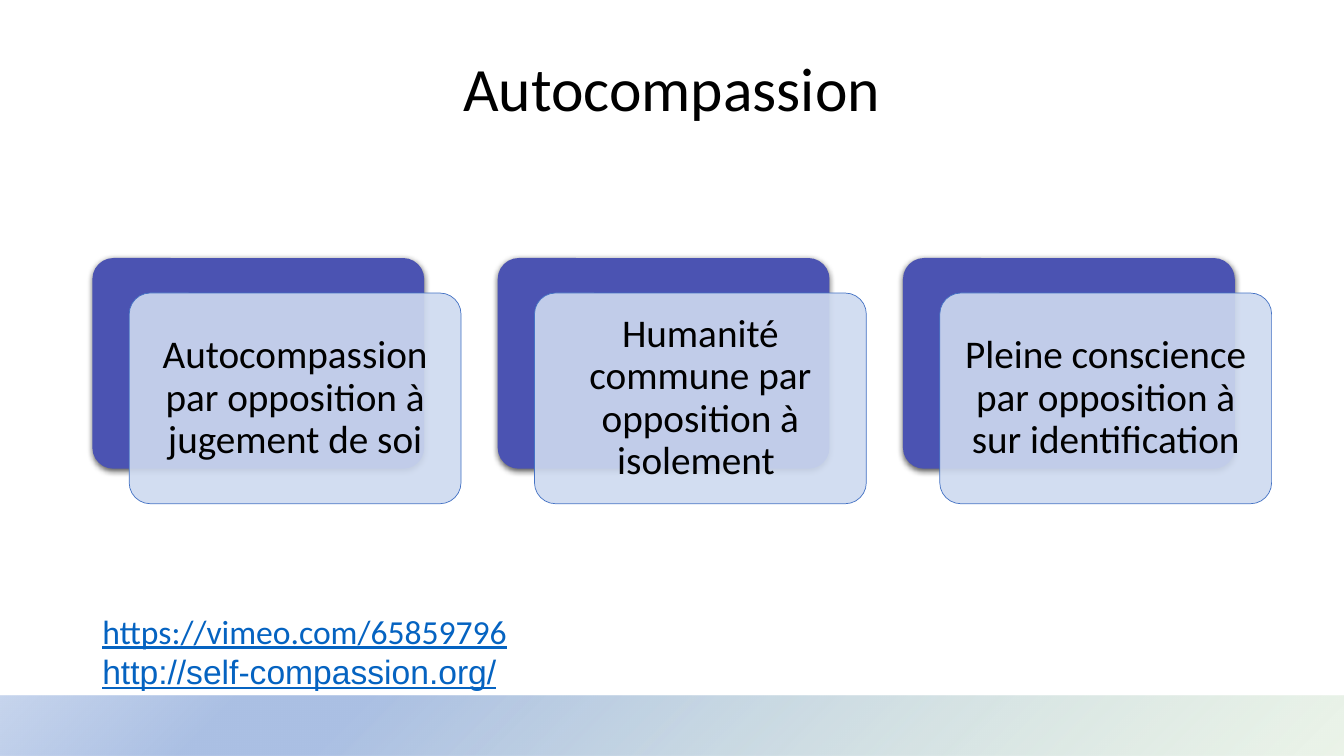
from lxml import etree
from pptx import Presentation
from pptx.dml.color import RGBColor as RGB
from pptx.enum.shapes import MSO_SHAPE as Kind
from pptx.enum.text import MSO_ANCHOR as Anchor, MSO_AUTO_SIZE as Auto, PP_ALIGN as Align
from pptx.oxml import parse_xml
from pptx.oxml.ns import nsdecls, qn
from pptx.util import Pt

COLORS = {
    "text": "000000", "link": "0563C1", "back": "4B53B2", "front": "CEDAF0",
    "edge": "4472C4", "mint": "D6E8D1", "sky": "ABC0E4", "mist": "C7D5ED",
}
CARDS = [
    "Autocompassion par opposition à jugement de soi",
    "Humanité commune par opposition à isolement ",
    "Pleine conscience par opposition à sur identification",
]
LINKS = [("https://vimeo.com/65859796", "Calibri"),
         ("http://self-compassion.org/", "Arial")]
STOPS = [(0, "mint", 47), (74, "sky", 100), (83, "sky", 100), (100, "mist", 100)]


def tint(name):
    return RGB.from_string(COLORS[name])


def add_shape(slide, kind, box, fill):
    """Add a flat, borderless shape."""
    shape = slide.shapes.add_shape(kind, *map(Pt, box))
    shape.shadow.inherit = False
    shape.fill.solid()
    shape.fill.fore_color.rgb = tint(fill)
    shape.line.fill.background()
    return shape


def add_text(slide, box, inset=None, **frame_set):
    area = slide.shapes.add_textbox(*map(Pt, box))
    frame = area.text_frame
    frame.word_wrap = True
    if inset is not None:
        for side in ("left", "top", "right", "bottom"):
            setattr(frame, f"margin_{side}", Pt(inset))
    for name, value in frame_set.items():
        setattr(frame, name, value)
    return frame


def style(para, text, color="text", **font_set):
    run = para.add_run()
    run.text = text
    run.font.color.rgb = tint(color)
    for name, value in font_set.items():
        setattr(run.font, name, value)


def center(frame, text, size):
    para = frame.paragraphs[0]
    para.alignment, para.line_spacing = Align.CENTER, 0.9
    style(para, text, name="Calibri", size=Pt(size))


def add_band(slide, box):
    """Add the strip whose colours spread from its bottom right corner."""
    band = add_shape(slide, Kind.RECTANGLE, box, "sky")
    stops = "".join(
        f'<a:gs pos="{pos * 1000}"><a:srgbClr val="{COLORS[name]}">'
        f'<a:alpha val="{alpha * 1000}"/></a:srgbClr></a:gs>'
        for pos, name, alpha in STOPS)
    grad = parse_xml(
        f'<a:gradFill {nsdecls("a")} rotWithShape="1"><a:gsLst>{stops}</a:gsLst>'
        '<a:path path="circle"><a:fillToRect l="100000" t="100000"/></a:path>'
        '<a:tileRect r="-100000" b="-100000"/></a:gradFill>')
    props = band.element.spPr
    props.replace(props.find(qn("a:solidFill")), grad)


def add_shadow(shape):
    effects = shape.element.spPr.find(qn("a:effectLst"))
    effects.append(parse_xml(
        f'<a:outerShdw {nsdecls("a")} blurRad="{Pt(4.5)}" dist="{Pt(1.5)}" '
        'dir="5400000" algn="ctr" rotWithShape="0"><a:srgbClr val="000000">'
        '<a:alpha val="63000"/></a:srgbClr></a:outerShdw>'))


def add_card(slide, box, text):
    """Add a dark plate with a pale, see-through plate shifted over it."""
    left, top, width, height = box
    back = add_shape(slide, Kind.ROUNDED_RECTANGLE, box, "back")
    add_shadow(back)
    left, top = left + 26.3, top + 25
    front = add_shape(slide, Kind.ROUNDED_RECTANGLE, (left, top, width, height), "front")
    color = front.element.spPr.find(f'{qn("a:solidFill")}/{qn("a:srgbClr")}')
    etree.SubElement(color, qn("a:alpha"), val="90000")
    front.line.color.rgb = tint("edge")
    front.line.width = Pt(0.5)
    for plate in (back, front):
        plate.adjustments[0] = 0.1
    pad = 4.4
    area = (left + pad, top + pad, width - 2 * pad, height - 2 * pad)
    center(add_text(slide, area, 8.4, vertical_anchor=Anchor.MIDDLE), text, 28)


def add_row(slide, box, gap):
    left, top, width, height = box
    for i, text in enumerate(CARDS):
        add_card(slide, (left + i * (width + gap), top, width, height), text)


def add_links(slide, box):
    frame = add_text(slide, box, auto_size=Auto.SHAPE_TO_FIT_TEXT)
    for i, (text, face) in enumerate(LINKS):
        para = frame.add_paragraph() if i else frame.paragraphs[0]
        style(para, text, "link", name=face, size=Pt(24), underline=True)


def main():
    deck = Presentation()
    deck.slide_width, deck.slide_height = Pt(960), Pt(540)
    slide = deck.slides.add_slide(deck.slide_layouts[6])
    add_band(slide, (0, 496.8, 960, 43.2))
    title = add_text(slide, (66, 31.7, 828, 67.7), vertical_anchor=Anchor.MIDDLE)
    center(title, "Autocompassion", 44)
    add_row(slide, (66, 184.3, 237, 150.5), 52.5)
    add_links(slide, (66, 432.7, 680, 65.5))
    deck.save("out.pptx")


if __name__ == "__main__":
    main()
